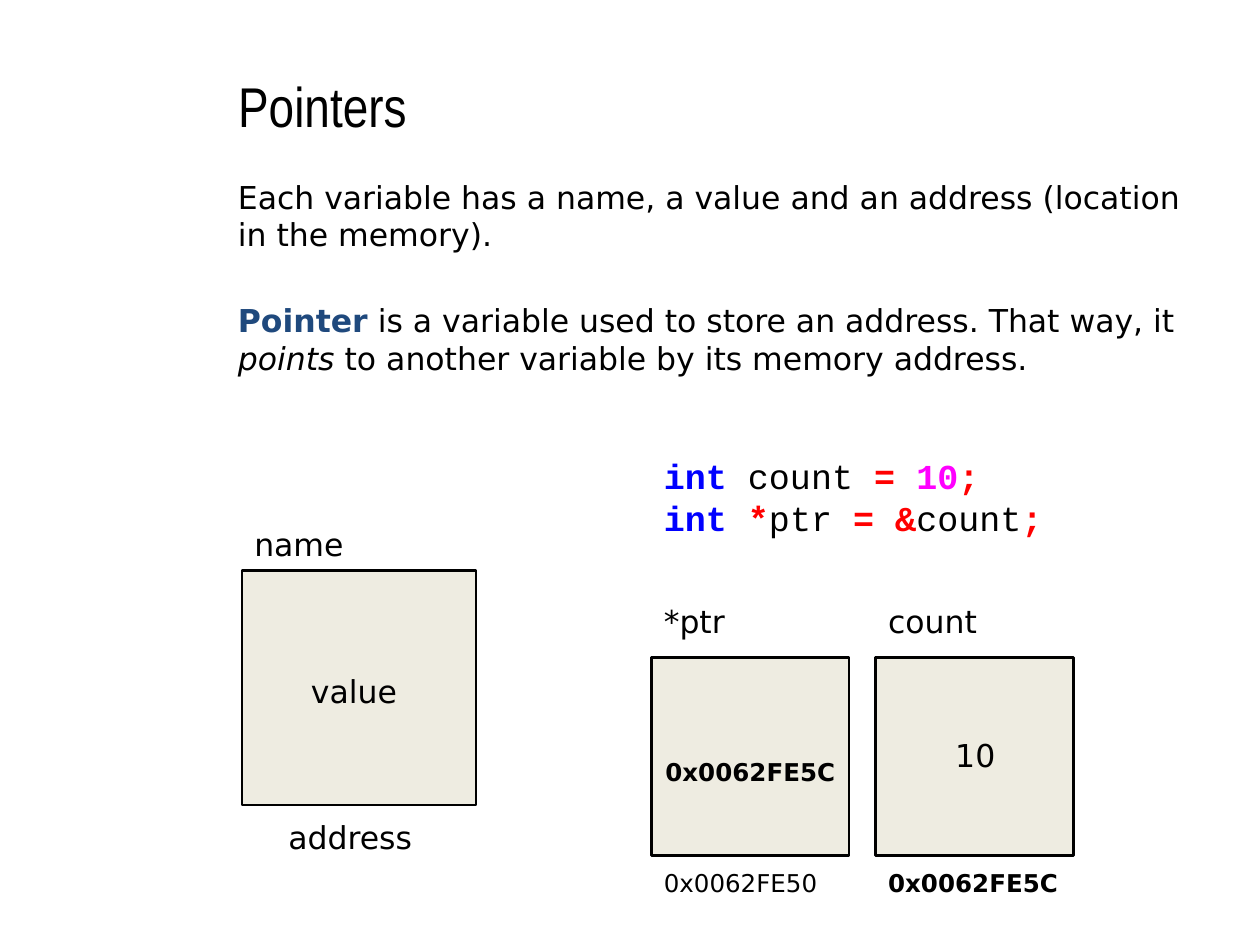
from dataclasses import dataclass

import pptx
import pptx.dml.color
import pptx.enum.shapes
import pptx.enum.text
import pptx.util
from pptx.util import Inches

COLORS = {
    "text": "000000",
    "term": "1F497D",
    "box": "EEECE1",
    "keyword": "0000FF",
    "operator": "FF0000",
    "number": "FF00FF",
}
BODY_FONT = "DejaVu Sans"
ALIGN = pptx.enum.text.PP_ALIGN


@dataclass
class Run:
    text: str
    color: str = "text"
    bold: bool = False
    italic: bool = False


@dataclass
class Label:
    text: str
    left: float
    top: float
    width: float = 0.97
    size: int = 18
    bold: bool = False
    align: ALIGN = ALIGN.LEFT


@dataclass
class MemoryBox:
    left: float
    top: float
    side: float


def rgb(name: str) -> pptx.dml.color.RGBColor:
    return pptx.dml.color.RGBColor.from_string(COLORS[name])


def set_margins(frame) -> None:
    frame.word_wrap = True
    frame.margin_left = frame.margin_right = Inches(0.1)
    frame.margin_top = frame.margin_bottom = Inches(0.1)


def add_text(slide, left: float, top: float, width: float, height: float,
             lines: list[list[Run]], size: int, font: str = BODY_FONT,
             align: ALIGN = ALIGN.LEFT, gap: float = 0) -> None:
    shape = slide.shapes.add_textbox(
        Inches(left), Inches(top), Inches(width), Inches(height))
    frame = shape.text_frame
    set_margins(frame)
    for index, runs in enumerate(lines):
        paragraph = frame.add_paragraph() if index else frame.paragraphs[0]
        paragraph.alignment = align
        paragraph.font.size = pptx.util.Pt(size)
        paragraph.font.name = font
        if index:
            paragraph.space_before = pptx.util.Pt(gap)
        for item in runs:
            run = paragraph.add_run()
            run.text = item.text
            run.font.color.rgb = rgb(item.color)
            run.font.bold = item.bold
            run.font.italic = item.italic


def add_label(slide, label: Label) -> None:
    add_text(slide, label.left, label.top, label.width, 0.46,
             [[Run(label.text, bold=label.bold)]], label.size, align=label.align)


def add_memory_box(slide, box: MemoryBox) -> None:
    shape = slide.shapes.add_shape(
        pptx.enum.shapes.MSO_SHAPE.RECTANGLE,
        Inches(box.left), Inches(box.top), Inches(box.side), Inches(box.side))
    shape.shadow.inherit = False
    shape.fill.solid()
    shape.fill.fore_color.rgb = rgb("box")
    shape.line.color.rgb = rgb("text")
    shape.line.width = pptx.util.Pt(1.5)


def add_title(slide, text: str) -> None:
    title = slide.shapes.title
    title.left, title.top = Inches(1.79), Inches(0.36)
    title.width, title.height = Inches(6.81), Inches(0.95)
    frame = title.text_frame
    set_margins(frame)
    frame.vertical_anchor = pptx.enum.text.MSO_ANCHOR.MIDDLE
    frame.text = text
    paragraph = frame.paragraphs[0]
    paragraph.alignment = ALIGN.LEFT
    paragraph.font.size = pptx.util.Pt(32)
    paragraph.font.name = "Arial Narrow"
    paragraph.font.color.rgb = rgb("text")


EXPLANATION = [
    [Run("Each variable has a name, a value and an address (location in the memory).")],
    [Run("Pointer", "term", bold=True),
     Run(" is a variable used to store an address. That way, it "),
     Run("points", italic=True),
     Run(" to another variable by its memory address.")],
]
CODE = [
    [Run("int ", "keyword", True), Run("count "), Run("= ", "operator", True),
     Run("10", "number", True), Run(";", "operator", True)],
    [Run("int ", "keyword", True), Run("*", "operator", True), Run("ptr "),
     Run("= &", "operator", True), Run("count"), Run(";", "operator", True)],
]
POINTER_LEFT, COUNT_LEFT, SIDE = 5.17, 6.95, 1.57
BOXES = [
    MemoryBox(1.92, 4.53, 1.86),
    MemoryBox(POINTER_LEFT, 5.22, SIDE),
    MemoryBox(COUNT_LEFT, 5.22, SIDE),
]
LABELS = [
    Label("name", 1.92, 4.07),
    Label("value", 2.37, 5.23),
    Label("address", 2.19, 6.39, 1.31),
    Label("*ptr", POINTER_LEFT, 4.68),
    Label("0x0062FE5C", POINTER_LEFT, 5.91, SIDE, 14, True, ALIGN.CENTER),
    Label("0x0062FE50", POINTER_LEFT, 6.79, SIDE, 14),
    Label("count", COUNT_LEFT, 4.68),
    Label("10", 7.38, 5.74, 0.72, align=ALIGN.CENTER),
    Label("0x0062FE5C", COUNT_LEFT, 6.79, SIDE, 14, True),
]


def main() -> None:
    presentation = pptx.Presentation()
    presentation.slide_width = Inches(10)
    presentation.slide_height = Inches(7.5)
    slide = presentation.slides.add_slide(presentation.slide_layouts[5])
    add_title(slide, "Pointers")
    add_text(slide, 1.79, 1.31, 7.74, 1.98, EXPLANATION, 18, gap=27.5)
    for box in BOXES:
        add_memory_box(slide, box)
    add_text(slide, POINTER_LEFT, 3.51, 3.43, 0.94, CODE, 20, "Courier New")
    for label in LABELS:
        add_label(slide, label)
    presentation.save("out.pptx")


if __name__ == "__main__":
    main()
